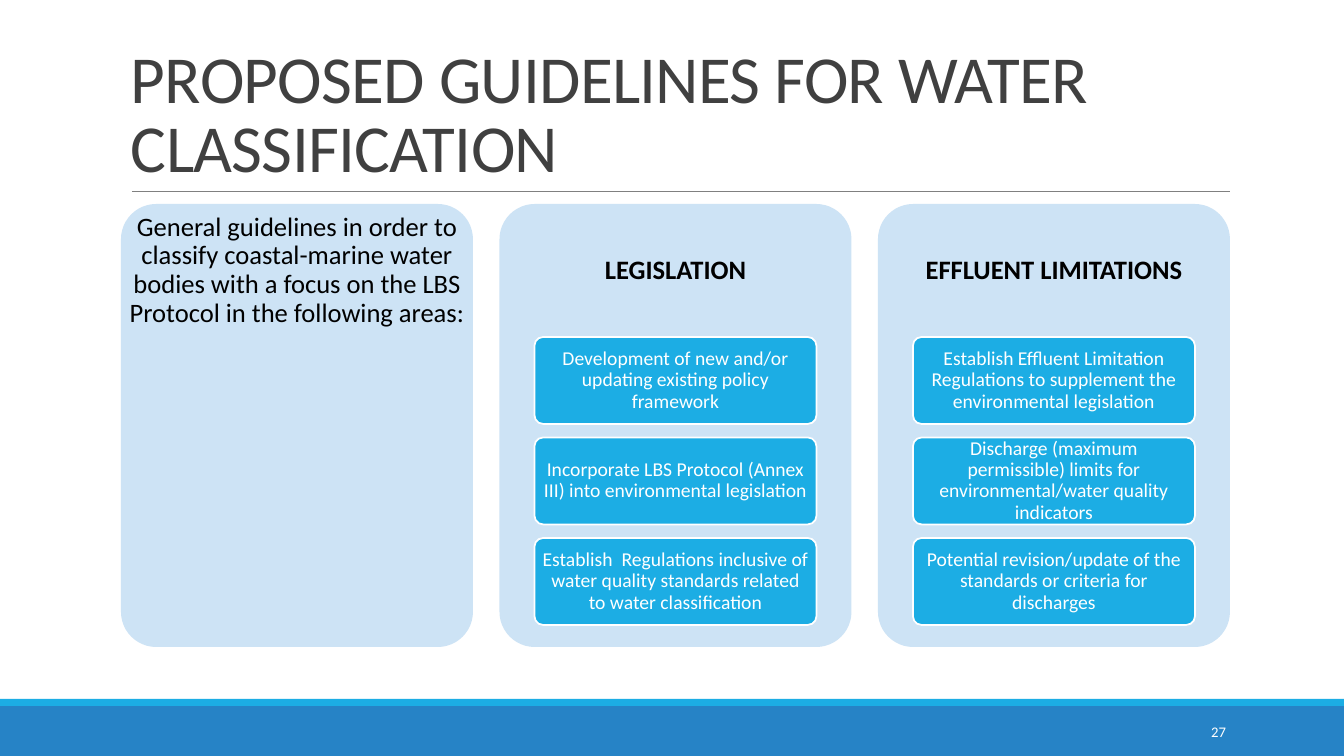
from lxml.etree import SubElement
from pptx import Presentation
from pptx.dml.color import RGBColor
from pptx.enum.shapes import MSO_CONNECTOR, MSO_SHAPE
from pptx.enum.text import MSO_ANCHOR, MSO_AUTO_SIZE, PP_ALIGN
from pptx.oxml.ns import qn
from pptx.util import Emu, Pt

WHITE = RGBColor(0xFF, 0xFF, 0xFF)
BLACK = RGBColor(0x00, 0x00, 0x00)
CHARCOAL = RGBColor(0x40, 0x40, 0x40)
GREY = RGBColor(0x80, 0x80, 0x80)
BLUE = RGBColor(0x26, 0x83, 0xC6)
SKY = RGBColor(0x1C, 0xAD, 0xE4)
PALE = RGBColor(0xCD, 0xE3, 0xF5)

FONT = "Calibri"
SLIDE_W, SLIDE_H = 1344, 756
COLUMNS_BOX = (121, 204, 1109, 443)
COLUMN_W = 352
HEADING_H = 133
CARD_H, CARD_PITCH, CARD_INDENT = 87, 100.5, 35

TITLE = "PROPOSED GUIDELINES FOR WATER CLASSIFICATION"
# heading, bold, cards
COLUMNS = [
    ("General guidelines in order to classify coastal-marine water bodies "
     "with a focus on the LBS Protocol in the following areas:", False, []),
    ("LEGISLATION", True, [
        "Development of new and/or updating existing policy framework",
        "Incorporate LBS Protocol (Annex III) into environmental legislation",
        "Establish  Regulations inclusive of water quality standards related "
        "to water classification",
    ]),
    ("EFFLUENT LIMITATIONS", True, [
        "Establish Effluent Limitation Regulations to supplement the "
        "environmental legislation",
        "Discharge (maximum permissible) limits for environmental/water "
        "quality indicators",
        "Potential revision/update of the standards or criteria for discharges",
    ]),
]


def px(n):
    """Convert px (100.8 to the inch) to EMU."""
    return Emu(round(n * 914400 / 100.8))


def write(sp, text, size, color, align=PP_ALIGN.CENTER, spacing=0.9,
          anchor=MSO_ANCHOR.MIDDLE, insets=(10, 5), bold=False):
    """Fill a shape with one formatted paragraph; insets are (side, top) px."""
    tf = sp.text_frame
    side, top = map(px, insets)
    frame = {"word_wrap": True, "auto_size": MSO_AUTO_SIZE.NONE,
             "vertical_anchor": anchor, "margin_left": side,
             "margin_right": side, "margin_top": top, "margin_bottom": top}
    for name, value in frame.items():
        setattr(tf, name, value)
    p = tf.paragraphs[0]
    p.alignment, p.line_spacing = align, spacing
    r = p.add_run()
    r.text = text
    r.font.color.rgb = color
    for name, value in {"name": FONT, "size": Pt(size), "bold": bold}.items():
        setattr(r.font, name, value)
    return r


def add_block(s, kind, box, fill, line=None):
    sp = s.shapes.add_shape(kind, *map(px, box))
    sp.shadow.inherit = False
    sp.fill.solid()
    sp.fill.fore_color.rgb = fill
    if line is None:
        sp.line.fill.background()
    else:
        sp.line.color.rgb = line
        sp.line.width = Pt(1.25)
    if kind == MSO_SHAPE.ROUNDED_RECTANGLE:
        sp.adjustments[0] = 0.1
    return sp


def add_title(s, box):
    """Place the title, with a thin rule along the bottom of its box."""
    x, y, w, h = box
    title = s.shapes.title
    for name, value in zip(("left", "top", "width", "height"), box):
        setattr(title, name, px(value))
    r = write(title, TITLE, 48, CHARCOAL, PP_ALIGN.LEFT, 0.85, MSO_ANCHOR.BOTTOM)
    r.font._element.set("spc", "-50")
    rule = s.shapes.add_connector(MSO_CONNECTOR.STRAIGHT, px(x + 11), px(y + h),
                                  px(x + w), px(y + h))
    rule.line.color.rgb = GREY
    rule.line.width = Pt(0.5)
    SubElement(rule._element.spPr, qn("a:effectLst"))


def add_column(s, box, heading, bold, cards):
    x, y, w, h = box
    add_block(s, MSO_SHAPE.ROUNDED_RECTANGLE, box, PALE)
    tb = s.shapes.add_textbox(*map(px, (x, y, w, HEADING_H)))
    write(tb, heading, 19, BLACK, insets=(8, 8), bold=bold)
    for i, text in enumerate(cards):
        card_box = (x + CARD_INDENT, y + HEADING_H + i * CARD_PITCH,
                    w - 2 * CARD_INDENT, CARD_H)
        card = add_block(s, MSO_SHAPE.ROUNDED_RECTANGLE, card_box, SKY, WHITE)
        write(card, text, 14, WHITE, insets=(4, 3))


def add_columns(s, box):
    x, y, w, h = box
    pitch = (w - COLUMN_W) / (len(COLUMNS) - 1)
    for i, column in enumerate(COLUMNS):
        add_column(s, (x + i * pitch, y, COLUMN_W, h), *column)


def add_footer(s, box):
    """Draw the band, its light strip and the slide number."""
    x, y, w, h = box
    strip = 7
    add_block(s, MSO_SHAPE.RECTANGLE, (x, y + strip, w, h - strip), BLUE)
    add_block(s, MSO_SHAPE.RECTANGLE, (x, y, w, strip), SKY)
    tb = s.shapes.add_textbox(*map(px, (x + w - 252, y + 13, 144, 40)))
    write(tb, "27", 10.5, WHITE, PP_ALIGN.RIGHT, 1)


def main():
    prs = Presentation()
    prs.slide_width, prs.slide_height = px(SLIDE_W), px(SLIDE_H)
    s = prs.slides.add_slide(prs.slide_layouts[5])
    add_footer(s, (0, 699, SLIDE_W, 57))
    add_title(s, (121, 31, 1109, 160))
    add_columns(s, COLUMNS_BOX)
    prs.save("out.pptx")


if __name__ == "__main__":
    main()
